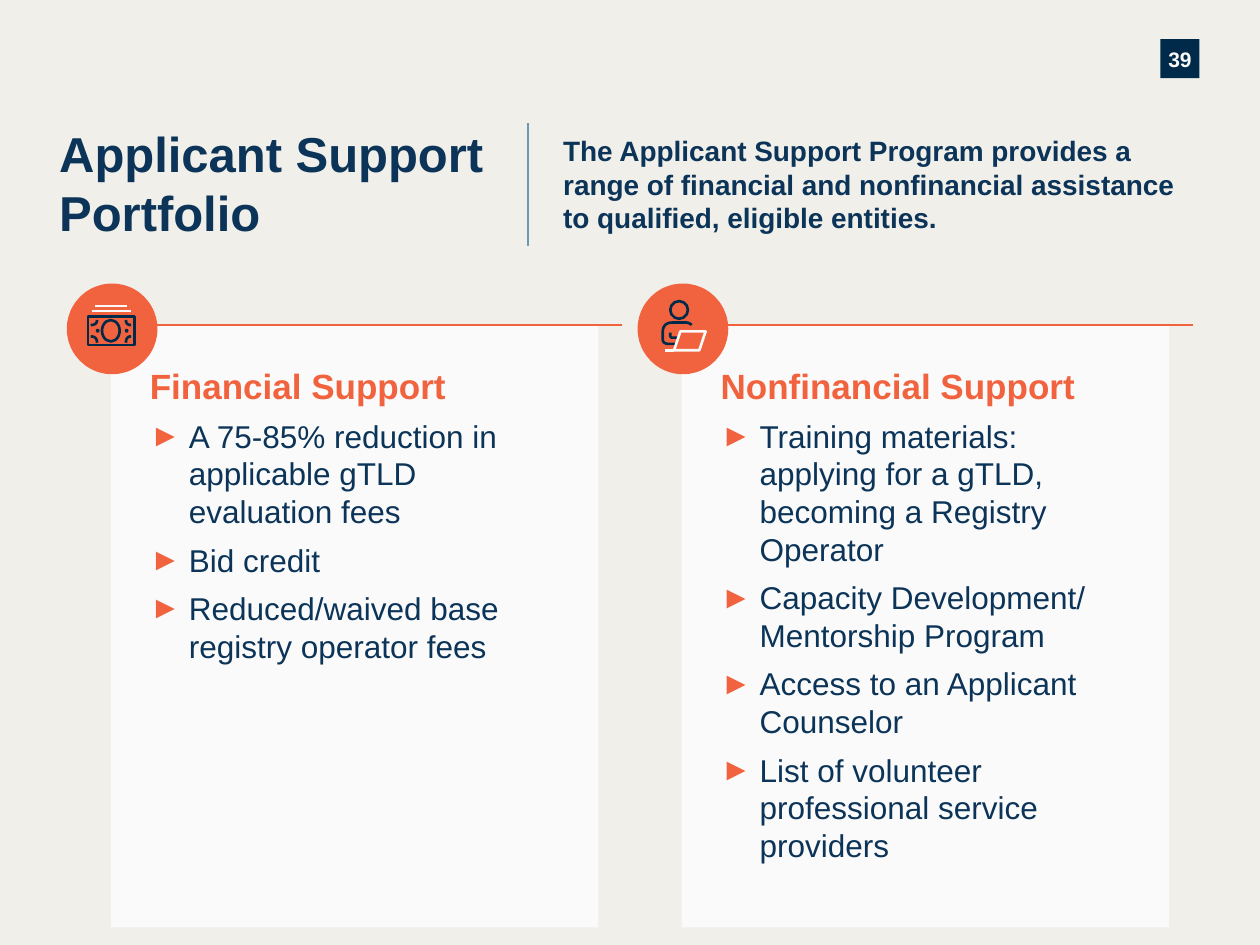
from lxml import etree
from pptx import Presentation
from pptx.dml.color import RGBColor
from pptx.enum.shapes import MSO_CONNECTOR, MSO_SHAPE
from pptx.enum.text import MSO_ANCHOR, MSO_AUTO_SIZE, PP_ALIGN
from pptx.oxml.ns import qn
from pptx.util import Inches, Pt

CREAM = RGBColor(0xF1, 0xEF, 0xEA)
WHITE = RGBColor(0xFA, 0xFA, 0xFA)
NAVY = RGBColor(0x0B, 0x34, 0x58)
DARK = RGBColor(0x00, 0x2A, 0x49)
ORANGE = RGBColor(0xF1, 0x63, 0x3E)
BLUE = RGBColor(0x6D, 0x99, 0xB3)
FONT = "Arial"

TITLE = "Applicant Support Portfolio"
SUMMARY = ("The Applicant Support Program provides a range of financial and "
           "nonfinancial assistance to qualified, eligible entities.")
PAGE_NUMBER = "39"
CARDS = [
    {"left": 0.88, "right_inset": 0.24, "heading": "Financial Support",
     "items": ["A 75-85% reduction in applicable gTLD evaluation fees",
               "Bid credit",
               "Reduced/waived base registry operator fees"]},
    {"left": 5.41, "right_inset": 0.35, "heading": "Nonfinancial Support",
     "items": ["Training materials: applying for a gTLD, becoming a Registry Operator",
               "Capacity Development/ Mentorship Program",
               "Access to an Applicant Counselor",
               "List of volunteer professional service providers"]},
]
CARD_TOP, CARD_WIDTH, CARD_HEIGHT = 2.58, 3.87, 4.78
RULE_LENGTH = 4.06
BADGE_SIZE, BADGE_TOP, BADGE_OFFSET = 0.72, 2.25, -0.35


def add_run(paragraph, text, size, color, bold=False):
    run = paragraph.add_run()
    run.text = text
    font = run.font
    font.name, font.size, font.bold = FONT, Pt(size), bold
    font.color.rgb = color


def set_frame(shape, insets=(0, 0, 0, 0), anchor=MSO_ANCHOR.TOP):
    frame = shape.text_frame
    frame.word_wrap = True
    frame.auto_size = MSO_AUTO_SIZE.NONE
    frame.vertical_anchor = anchor
    (frame.margin_left, frame.margin_top,
     frame.margin_right, frame.margin_bottom) = map(Inches, insets)
    return frame


def add_filled(shapes, kind, box, color):
    shape = shapes.add_shape(kind, *map(Inches, box))
    shape.shadow.inherit = False
    shape.fill.solid()
    shape.fill.fore_color.rgb = color
    shape.line.fill.background()
    return shape


def add_line(shapes, start, end, color, width=1.25):
    line = shapes.add_connector(MSO_CONNECTOR.STRAIGHT, *map(Inches, start + end))
    line.line.color.rgb = color
    line.line.width = Pt(width)
    etree.SubElement(line._element.spPr, qn("a:effectLst"))


def style_outline(shape, color):
    shape.shadow.inherit = False
    shape.fill.background()
    shape.line.color.rgb = color
    shape.line.width = Pt(1.5)


def add_outline(shapes, kind, box, color=DARK):
    style_outline(shapes.add_shape(kind, *map(Inches, box)), color)


def add_stroke(shapes, points, color=DARK, close=False):
    points = [tuple(map(Inches, point)) for point in points]
    builder = shapes.build_freeform(*points[0], scale=1.0)
    builder.add_line_segments(points[1:], close=close)
    style_outline(builder.convert_to_shape(), color)


def bend(start, corner, end, steps=8):
    """Points of a smooth curve that leaves and arrives along the corner's sides."""
    return [tuple((1 - t) ** 2 * a + 2 * t * (1 - t) * b + t * t * c
                  for a, b, c in zip(start, corner, end))
            for t in (step / steps for step in range(steps + 1))]


def draw_banknote(shapes):
    add_outline(shapes, MSO_SHAPE.RECTANGLE, (0.7, 2.51, 0.37, 0.23))
    add_outline(shapes, MSO_SHAPE.OVAL, (0.81, 2.54, 0.14, 0.17))
    for x in (0.77, 1.0):
        add_outline(shapes, MSO_SHAPE.OVAL, (x, 2.62, 0.01, 0.01))
    for outer_x, inner_x in ((0.72, 0.77), (1.04, 1.0)):
        for outer_y, inner_y in ((2.58, 2.54), (2.67, 2.72)):
            add_stroke(shapes, bend((outer_x, outer_y), (inner_x, outer_y),
                                    (inner_x, inner_y)))
    add_line(shapes, (0.73, 2.47), (1.04, 2.47), WHITE, 1.5)
    add_line(shapes, (0.75, 2.43), (1.01, 2.43), WHITE, 1.5)


def draw_person_with_laptop(shapes):
    add_outline(shapes, MSO_SHAPE.OVAL, (5.32, 2.39, 0.14, 0.14))
    add_stroke(shapes, [(5.38, 2.68), (5.33, 2.68), (5.32, 2.67), (5.32, 2.64)])
    add_stroke(shapes, bend((5.49, 2.58), (5.47, 2.56), (5.44, 2.56))
               + bend((5.34, 2.56), (5.26, 2.56), (5.26, 2.64))
               + bend((5.26, 2.69), (5.26, 2.73), (5.31, 2.73))
               + [(5.37, 2.73)])
    add_line(shapes, (5.28, 2.78), (5.35, 2.78), WHITE, 1.5)
    add_stroke(shapes, [(5.4, 2.63), (5.35, 2.78), (5.55, 2.78), (5.6, 2.63)],
               WHITE, close=True)


def add_bullet(paragraph):
    paragraph.space_before = Pt(6)
    properties = paragraph._p.get_or_add_pPr()
    properties.set("marL", str(Inches(0.31)))
    properties.set("indent", str(-Inches(0.31)))
    color = etree.SubElement(properties, qn("a:buClr"))
    etree.SubElement(color, qn("a:srgbClr"), val=str(ORANGE))
    etree.SubElement(properties, qn("a:buFont"), typeface=FONT)
    etree.SubElement(properties, qn("a:buChar"), char="►")


def add_card(shapes, card):
    left = card["left"]
    panel = add_filled(shapes, MSO_SHAPE.RECTANGLE,
                       (left, CARD_TOP, CARD_WIDTH, CARD_HEIGHT), WHITE)
    frame = set_frame(panel, (0.31, 0.31, card["right_inset"], 0.31))
    heading = frame.paragraphs[0]
    heading.alignment = PP_ALIGN.LEFT
    add_run(heading, card["heading"], 20, ORANGE, bold=True)
    for item in card["items"]:
        paragraph = frame.add_paragraph()
        paragraph.alignment = PP_ALIGN.LEFT
        add_bullet(paragraph)
        add_run(paragraph, item, 18, NAVY)
    add_line(shapes, (left, CARD_TOP), (left + RULE_LENGTH, CARD_TOP), ORANGE)
    add_filled(shapes, MSO_SHAPE.OVAL,
               (left + BADGE_OFFSET, BADGE_TOP, BADGE_SIZE, BADGE_SIZE), ORANGE)


def main():
    presentation = Presentation()
    presentation.slide_width, presentation.slide_height = Inches(10), Inches(7.5)
    slide = presentation.slides.add_slide(presentation.slide_layouts[5])
    slide.background.fill.solid()
    slide.background.fill.fore_color.rgb = CREAM
    shapes = slide.shapes

    title = shapes.title
    title.left, title.top, title.width, title.height = map(
        Inches, (0.47, 0.98, 3.87, 0.92))
    paragraph = set_frame(title).paragraphs[0]
    paragraph.alignment = PP_ALIGN.LEFT
    add_run(paragraph, TITLE, 28, NAVY, bold=True)

    number = add_filled(shapes, MSO_SHAPE.RECTANGLE, (9.21, 0.31, 0.31, 0.31), DARK)
    paragraph = set_frame(number, anchor=MSO_ANCHOR.MIDDLE).paragraphs[0]
    paragraph.alignment = PP_ALIGN.CENTER
    paragraph.line_spacing = 1.08
    add_run(paragraph, PAGE_NUMBER, 12, WHITE, bold=True)

    summary = shapes.add_textbox(*map(Inches, (4.47, 1.06, 4.94, 0.81)))
    frame = set_frame(summary)
    frame.auto_size = MSO_AUTO_SIZE.SHAPE_TO_FIT_TEXT
    add_run(frame.paragraphs[0], SUMMARY, 16, NAVY, bold=True)
    add_line(shapes, (4.19, 0.98), (4.19, 1.95), BLUE)

    for card, draw_icon in zip(CARDS, (draw_banknote, draw_person_with_laptop)):
        add_card(shapes, card)
        draw_icon(shapes.add_group_shape().shapes)

    presentation.save("out.pptx")


if __name__ == "__main__":
    main()
